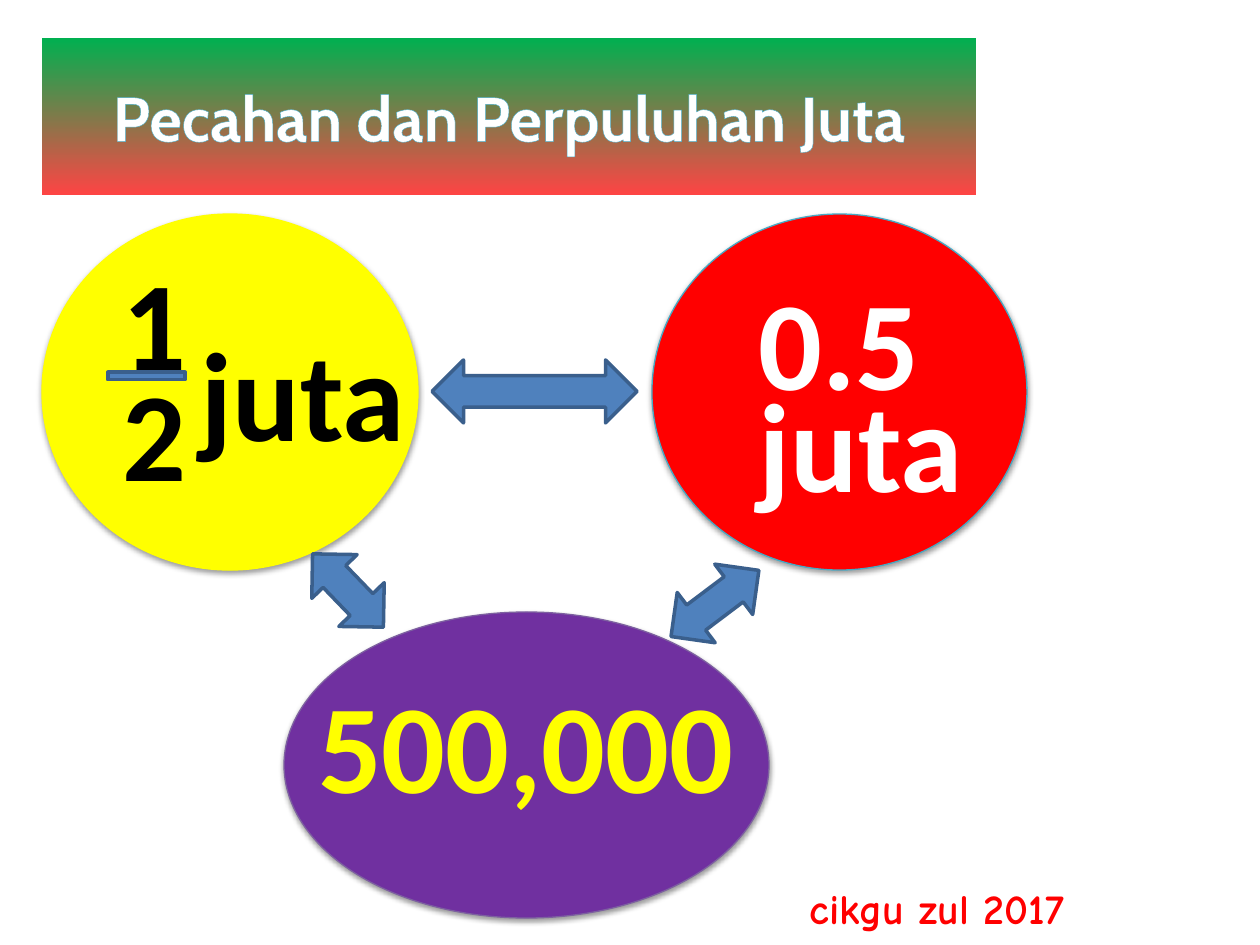
from dataclasses import dataclass

from lxml import etree
from pptx import Presentation
from pptx import util as u
from pptx.dml.color import RGBColor
from pptx.enum import shapes, text
from pptx.oxml import ns

EMU_PER_PX = 914400 / 126
TITLE_ONLY = 5


@dataclass(frozen=True)
class Theme:
    """Colours, fonts and type sizes of the slide."""
    white: str = "FFFFFF"
    black: str = "000000"
    yellow: str = "FFFF00"
    red: str = "FF0000"
    purple: str = "7030A0"
    purple_edge: str = "7D60A0"
    teal_edge: str = "46AAC5"
    title_edge: str = "4BACC6"
    title_bottom: str = "FE4444"
    title_top: str = "00B050"
    arrow: str = "4F81BD"
    arrow_edge: str = "3A5F8C"
    title_font: str = "Cabin"
    number_font: str = "Calibri"
    credit_font: str = "Comic Neue"
    title_size: int = 36
    number_size: int = 72
    credit_size: int = 24


THEME = Theme()


def px(length):
    """Turn pixels into EMU."""
    return u.Emu(round(length * EMU_PER_PX))


def rgb(colour):
    """Turn a hex string into a colour."""
    return RGBColor.from_string(colour)


def add_xml(parent, tag, **attributes):
    """Append a DrawingML element and return it."""
    return etree.SubElement(parent, ns.qn(tag), attributes)


def write(frame, words, *, colour, font=THEME.number_font, size=THEME.number_size):
    """Put one bold centred line in a text frame and return its run."""
    para = frame.paragraphs[0]
    para.alignment = text.PP_ALIGN.CENTER
    span = para.add_run()
    span.text = words
    span.font.name = font
    span.font.size = u.Pt(size)
    span.font.bold = True
    span.font.color.rgb = rgb(colour)
    return span


def outline_text(span, colour, width):
    """Draw a line round the letters of a run."""
    line = etree.Element(ns.qn("a:ln"), w=str(u.Pt(width)))
    fill = add_xml(line, "a:solidFill")
    add_xml(fill, "a:srgbClr", val=colour)
    span.font._element.insert(0, line)


def add_title(page, words, frame):
    """Fill the title placeholder over a vertical gradient."""
    title = page.shapes.title
    title.left, title.top, title.width, title.height = map(px, frame)
    title.fill.gradient()
    title.fill.gradient_angle = 90
    for stop, colour, position in zip(
        title.fill.gradient_stops, (THEME.title_bottom, THEME.title_top), (0, 1)
    ):
        stop.color.rgb = rgb(colour)
        stop.position = position
    title.text_frame.vertical_anchor = text.MSO_ANCHOR.MIDDLE
    span = write(title.text_frame, words, colour=THEME.white,
                 font=THEME.title_font, size=THEME.title_size)
    outline_text(span, THEME.title_edge, 0.8)


def add_figure(page, kind, frame, fill, edge, width):
    """Add a filled and outlined preset shape without a shadow."""
    shape = page.shapes.add_shape(kind, *map(px, frame))
    shape.shadow.inherit = False
    shape.fill.solid()
    shape.fill.fore_color.rgb = rgb(fill)
    shape.line.color.rgb = rgb(edge)
    shape.line.width = u.Pt(width)
    return shape


def add_ellipse(page, frame, fill, edge):
    """Add an ellipse with a soft shadow below it."""
    shape = add_figure(page, shapes.MSO_SHAPE.OVAL, frame, fill, edge, 0.75)
    effects = shape._element.spPr.find(ns.qn("a:effectLst"))
    shadow = add_xml(effects, "a:outerShdw", blurRad=str(u.Pt(3.1)),
                     dist=str(u.Pt(1.6)), dir="5400000", rotWithShape="0")
    colour = add_xml(shadow, "a:srgbClr", val=THEME.black)
    add_xml(colour, "a:alpha", val="38000")


def add_symbol(page, kind, frame, rotation=0):
    """Add a blue arrow or fraction bar."""
    shape = add_figure(page, kind, frame, THEME.arrow, THEME.arrow_edge, 2)
    shape.rotation = rotation


def add_label(page, words, frame, **style):
    """Add a text box that fits its one line."""
    box = page.shapes.add_textbox(*map(px, frame))
    box.text_frame.word_wrap = False
    box.text_frame.auto_size = text.MSO_AUTO_SIZE.SHAPE_TO_FIT_TEXT
    write(box.text_frame, words, **style)


def main():
    """Build the slide and save it."""
    deck = Presentation()
    deck.slide_width, deck.slide_height = px(1260), px(945)
    page = deck.slides.add_slide(deck.slide_layouts[TITLE_ONLY])
    add_title(page, "Pecahan dan Perpuluhan Juta", (42, 38, 934, 157))

    add_ellipse(page, (42, 214, 376, 356), THEME.yellow, THEME.yellow)
    add_ellipse(page, (652, 214, 375, 356), THEME.red, THEME.teal_edge)
    add_ellipse(page, (284, 612, 485, 306), THEME.purple, THEME.purple_edge)

    for frame, rotation in (
        ((432, 360, 205, 63), 0),
        ((660, 572, 110, 63), 323),
        ((297, 559, 102, 63), 226),
    ):
        add_symbol(page, shapes.MSO_SHAPE.LEFT_RIGHT_ARROW, frame, rotation)

    add_label(page, "1", (110, 238, 89, 165), colour=THEME.black)
    add_symbol(page, shapes.MSO_SHAPE.MATH_MINUS, (94, 360, 105, 32))
    for words, frame, colour in (
        ("2", (110, 349, 89, 165), THEME.black),
        ("juta", (186, 309, 234, 165), THEME.black),
        ("0.5", (744, 258, 190, 165), THEME.white),
        ("juta", (744, 360, 234, 165), THEME.white),
        ("500,000", (304, 661, 444, 165), THEME.yellow),
    ):
        add_label(page, words, frame, colour=colour)
    add_label(page, "cikgu zul 2017", (746, 876, 382, 71), colour=THEME.red,
              font=THEME.credit_font, size=THEME.credit_size)
    deck.save("out.pptx")


if __name__ == "__main__":
    main()
